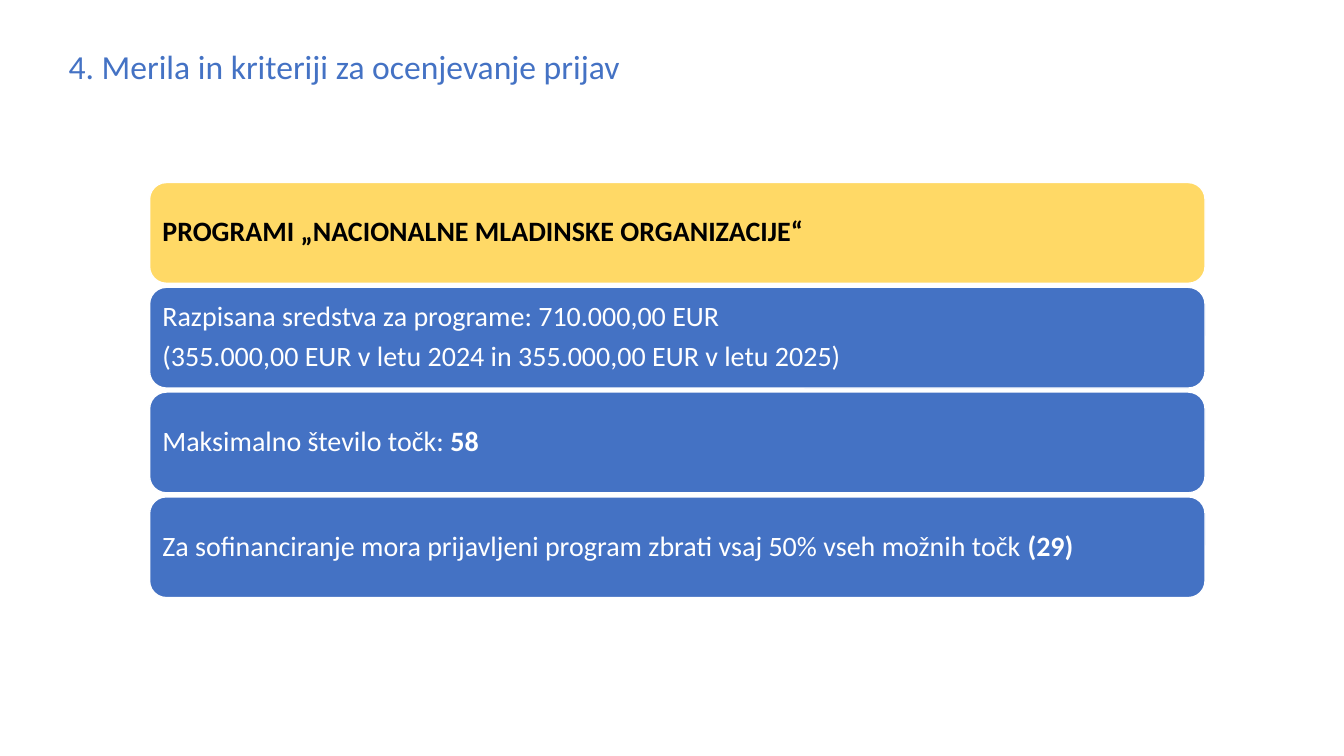
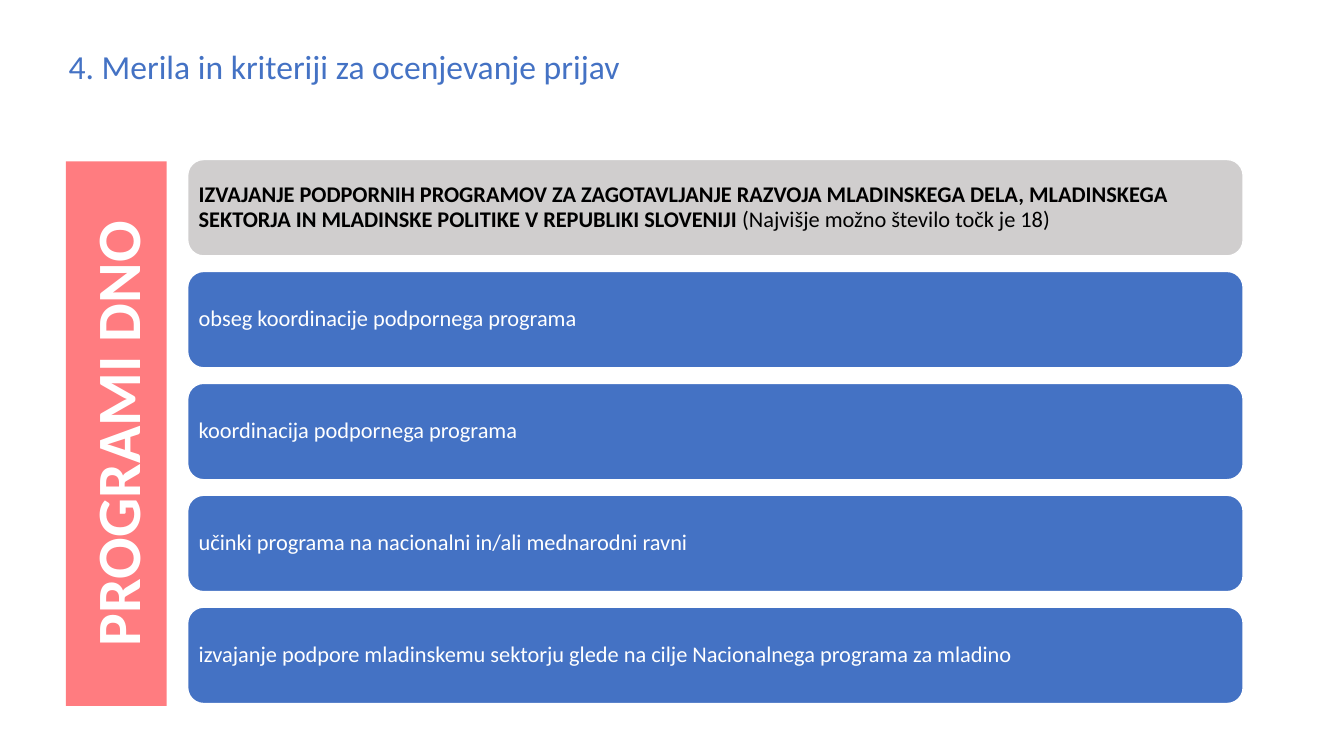
from pptx import Presentation
from pptx.dml.color import RGBColor
from pptx.enum.shapes import MSO_SHAPE
from pptx.enum.text import MSO_ANCHOR, PP_ALIGN
from pptx.oxml.ns import qn
from pptx.util import Cm, Pt

FONT = "Calibri"
COLORS = {
    "blue": "4472C4",
    "yellow": "FFD966",
    "grey": "D0CECE",
    "coral": "FF7C80",
    "black": "000000",
    "white": "FFFFFF",
}
TITLE = "4. Merila in kriteriji za ocenjevanje prijav"
BAR_WIDTH = 26.6

# Each bar is a list of paragraphs; each paragraph is a list of (text, bold)
FUNDING_BARS = [
    [[("PROGRAMI „NACIONALNE MLADINSKE ORGANIZACIJE“", True)]],
    [
        [("Razpisana sredstva za programe: 710.000,00 EUR", False)],
        [("(355.000,00 EUR v letu 2024 in 355.000,00 EUR v letu 2025)", False)],
    ],
    [[("Maksimalno število točk: ", False), ("58", True)]],
    [[
        ("Za sofinanciranje mora prijavljeni program zbrati vsaj 50% vseh možnih točk ", False),
        ("(29)", True),
    ]],
]
CRITERIA_BARS = [
    [[
        ("IZVAJANJE PODPORNIH PROGRAMOV ZA ZAGOTAVLJANJE RAZVOJA MLADINSKEGA DELA, "
         "MLADINSKEGA SEKTORJA IN MLADINSKE POLITIKE V REPUBLIKI SLOVENIJI ", True),
        ("(Najvišje možno število točk je 18)", False),
    ]],
    [[("obseg koordinacije podpornega programa", False)]],
    [[("koordinacija podpornega programa", False)]],
    [[("učinki programa na nacionalni in/ali mednarodni ravni", False)]],
    [[("izvajanje podpore mladinskemu sektorju glede na cilje "
       "Nacionalnega programa za mladino", False)]],
]


def color(name):
    return RGBColor.from_string(COLORS[name])


def style_font(font, size, color_name, bold=False):
    font.name = FONT
    font.size = Pt(size)
    font.bold = bold
    font.color.rgb = color(color_name)


def add_titled_page(deck):
    page = deck.slides.add_slide(deck.slide_layouts[6])
    box = page.shapes.add_textbox(Cm(1.48), Cm(1.04), Cm(14.53), Cm(1.28))
    box.text_frame.word_wrap = False
    box.text_frame.text = TITLE
    style_font(box.text_frame.paragraphs[0].runs[0].font, 24, "blue")
    return page


def add_block(page, kind, left, top, width, height, fill):
    block = page.shapes.add_shape(kind, Cm(left), Cm(top), Cm(width), Cm(height))
    block.shadow.inherit = False
    block.fill.solid()
    block.fill.fore_color.rgb = color(fill)
    block.line.fill.background()
    block.text_frame.word_wrap = True
    block.text_frame.vertical_anchor = MSO_ANCHOR.MIDDLE
    return block


def fill_bar(frame, paragraphs, size, text_color, inset):
    frame.margin_left = frame.margin_right = Cm(inset)
    frame.margin_top = frame.margin_bottom = Cm(inset)
    for index, spans in enumerate(paragraphs):
        para = frame.add_paragraph() if index else frame.paragraphs[0]
        para.alignment = PP_ALIGN.LEFT
        para.line_spacing = 0.9
        if index:
            para.space_before = Pt(size * 0.35)
        for text, bold in spans:
            span = para.add_run()
            span.text = text
            style_font(span.font, size, text_color, bold)


def add_bar_stack(page, bars, left, top, height, pitch, size, inset, heading_fill):
    """Stack equal bars; the first is the heading."""
    for index, paragraphs in enumerate(bars):
        fill, text_color = ("blue", "white") if index else (heading_fill, "black")
        bar = add_block(page, MSO_SHAPE.ROUNDED_RECTANGLE, left, top + index * pitch,
                        BAR_WIDTH, height, fill)
        bar.line.color.rgb = color("white")
        bar.line.width = Pt(1)
        fill_bar(bar.text_frame, paragraphs, size, text_color, inset)


def add_side_label(page, text):
    label = add_block(page, MSO_SHAPE.RECTANGLE, 1.66, 4.07, 2.54, 13.72, "coral")
    label.text_frame.text = text
    para = label.text_frame.paragraphs[0]
    para.alignment = PP_ALIGN.CENTER
    style_font(para.runs[0].font, 44, "white", True)
    # Text reads from bottom to top
    label.element.txBody.find(qn("a:bodyPr")).set("vert", "vert270")


def main():
    deck = Presentation()
    deck.slide_width, deck.slide_height = Cm(33.87), Cm(19.05)

    # Funding and thresholds
    page = add_titled_page(deck)
    add_bar_stack(page, FUNDING_BARS, left=3.77, top=4.6, height=2.54, pitch=2.64,
                  size=20, inset=0.2, heading_fill="yellow")

    # Criteria for support programmes
    page = add_titled_page(deck)
    add_bar_stack(page, CRITERIA_BARS, left=4.73, top=4.02, height=2.43, pitch=2.82,
                  size=16, inset=0.16, heading_fill="grey")
    add_side_label(page, "PROGRAMI DNO")

    deck.save("out.pptx")


if __name__ == "__main__":
    main()
